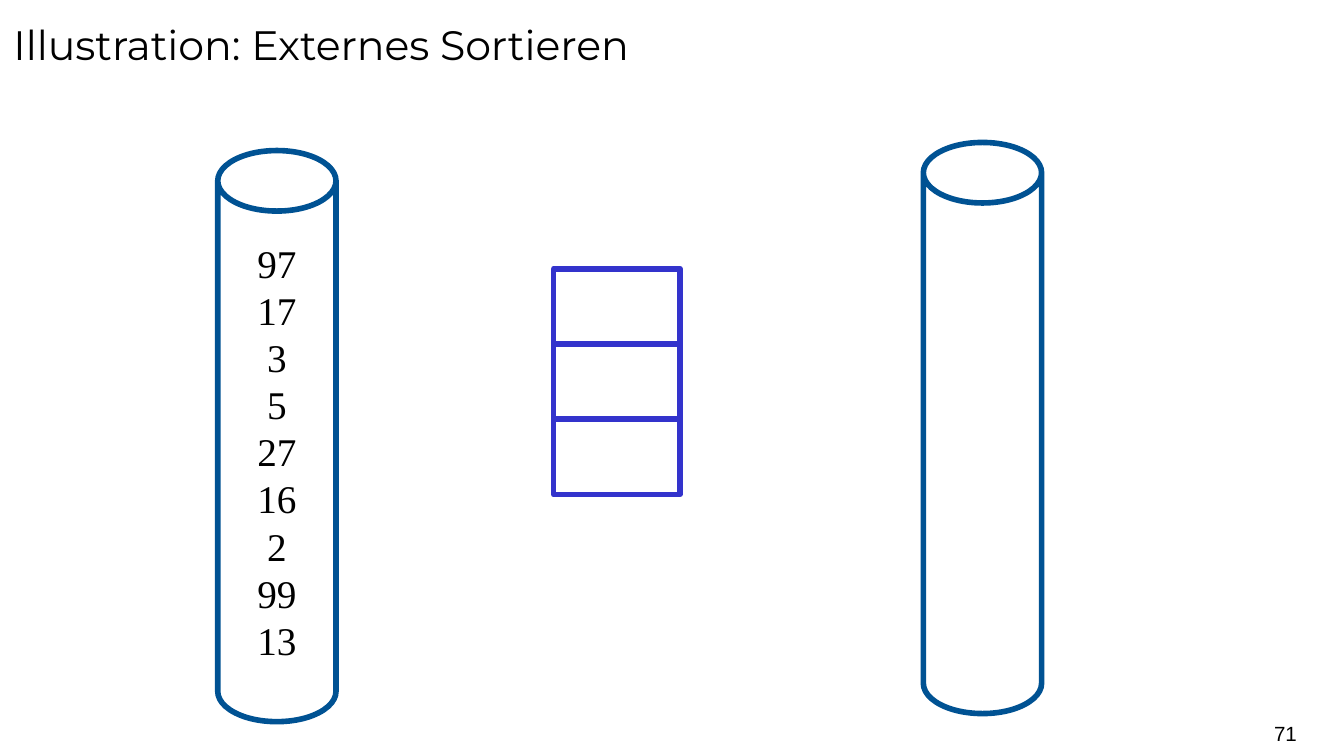
import pptx
import pptx.util
import pptx.dml.color
import pptx.enum.shapes
import pptx.enum.text

Inches = pptx.util.Inches
Pt = pptx.util.Pt
SHAPE = pptx.enum.shapes.MSO_SHAPE
ALIGN = pptx.enum.text.PP_ALIGN
ANCHOR = pptx.enum.text.MSO_ANCHOR

BLUE = "005293"
VIOLET = "3333CC"
VALUES = [97, 17, 3, 5, 27, 16, 2, 99, 13]


def color(code):
    return pptx.dml.color.RGBColor.from_string(code)


def style(para, text, font, size, align):
    para.text = text
    para.alignment = align
    para.font.name = font
    para.font.size = Pt(size)
    para.font.color.rgb = color("000000")


def add_title(slide, text):
    title = slide.shapes.title
    title.left, title.top = Inches(0), Inches(0)
    title.width, title.height = Inches(10), Inches(0.94)
    frame = title.text_frame
    frame.auto_size = pptx.enum.text.MSO_AUTO_SIZE.NONE
    frame.vertical_anchor = ANCHOR.TOP
    para = frame.paragraphs[0]
    style(para, text, "Montserrat", 22, ALIGN.LEFT)
    para.line_spacing = 1.25


def add_outline(slide, kind, left, top, width, height, line):
    """Add a white shape with a thick coloured outline."""
    shape = slide.shapes.add_shape(
        kind, Inches(left), Inches(top), Inches(width), Inches(height))
    shape.shadow.inherit = False
    shape.fill.solid()
    shape.fill.fore_color.rgb = color("FFFFFF")
    shape.line.color.rgb = color(line)
    shape.line.width = Pt(3)
    return shape


def add_disk(slide, left, top, values=()):
    """Add a cylinder that lists its stored values."""
    disk = add_outline(slide, SHAPE.CAN, left, top, 0.88, 4.25, BLUE)
    disk.adjustments[0] = 0.512
    frame = disk.text_frame
    frame.word_wrap = False
    frame.vertical_anchor = ANCHOR.MIDDLE
    for i, value in enumerate(values):
        para = frame.add_paragraph() if i else frame.paragraphs[0]
        style(para, str(value), "Times New Roman", 21, ALIGN.CENTER)


def add_buffer(slide, left, top, count):
    """Add a stack of empty memory cells."""
    for i in range(count):
        add_outline(slide, SHAPE.RECTANGLE, left, top + i * 0.56, 0.94, 0.56, VIOLET)


def add_number(slide, text):
    box = slide.shapes.add_textbox(
        Inches(7.41), Inches(5.31), Inches(2.24), Inches(0.3))
    frame = box.text_frame
    frame.word_wrap = True
    frame.margin_left = frame.margin_right = 0
    frame.vertical_anchor = ANCHOR.MIDDLE
    style(frame.paragraphs[0], text, "Arial", 11, ALIGN.RIGHT)


def main():
    deck = pptx.Presentation()
    deck.slide_width = Inches(10)
    deck.slide_height = Inches(10 * 9 / 16)
    slide = deck.slides.add_slide(deck.slide_layouts.get_by_name("Title Only"))
    add_title(slide, "Illustration: Externes Sortieren")
    add_disk(slide, 1.62, 1.12, VALUES)
    add_disk(slide, 6.87, 1.06)
    add_buffer(slide, 4.12, 2, 3)
    add_number(slide, "71")
    deck.save("out.pptx")


if __name__ == "__main__":
    main()
